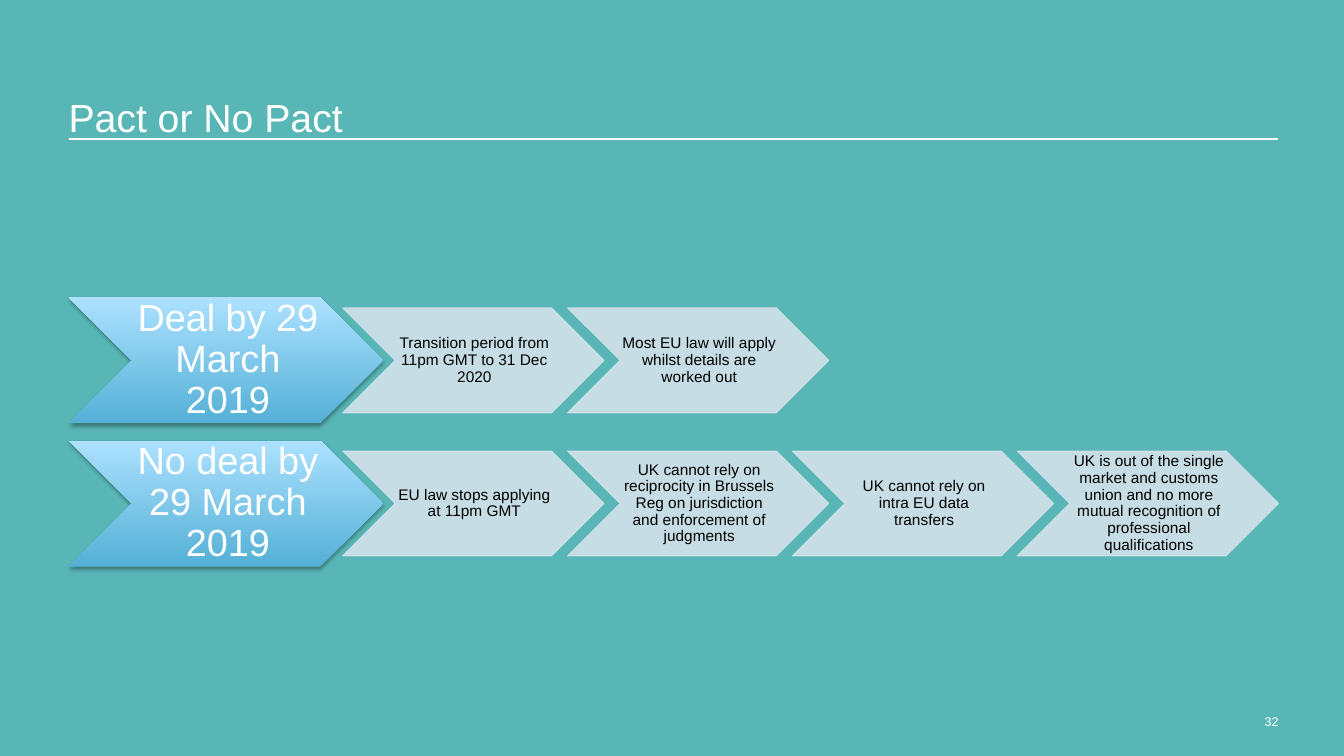
from lxml.etree import SubElement as Sub
from pptx import Presentation
from pptx.dml.color import RGBColor as RGB
from pptx.enum.shapes import MSO_CONNECTOR as Conn, MSO_SHAPE as Shape
from pptx.enum.text import MSO_ANCHOR as Anchor, PP_ALIGN as Align
from pptx.oxml.ns import qn
from pptx.util import Inches, Pt

TEAL = RGB(0x58, 0xB7, 0xB6)
WHITE = RGB(0xFF, 0xFF, 0xFF)
BLACK = RGB(0x00, 0x00, 0x00)
BLUE = RGB(0x55, 0xB0, 0xD6)
SKY = RGB(0xAC, 0xE1, 0xFF)
PALE = RGB(0xD3, 0xE2, 0xEB)

LEFT, RIGHT = 0.68, 12.68
TOP, ROW = 2.95, 1.42
STEP_X, STEP_GAP = 3.4, 2.23
HEAD_W, HEAD_H = 3.12, 1.25
STEP_W, STEP_H = 2.59, 1.04

ROWS = [
    ("Deal by 29 March 2019", [
        "Transition period from 11pm GMT to 31 Dec 2020",
        "Most EU law will apply whilst details are worked out",
    ]),
    ("No deal by 29 March 2019", [
        "EU law stops applying at 11pm GMT",
        "UK cannot rely on reciprocity in Brussels Reg on jurisdiction "
        "and enforcement of judgments",
        "UK cannot rely on intra EU data transfers",
        "UK is out of the single market and customs union and no more "
        "mutual recognition of professional qualifications",
    ]),
]


def put(item, **vals):
    for name, val in vals.items():
        setattr(item, name, val)


def write(shape, text, size, color, align, anchor, pad=(0, 0, 0), lead=1.0):
    """Fill a shape with one paragraph; pad is left, top, bottom."""
    left, top, base = map(Inches, pad)
    frame = shape.text_frame
    put(frame, word_wrap=True, vertical_anchor=anchor, margin_left=left,
        margin_top=top, margin_right=0, margin_bottom=base)
    para = frame.paragraphs[0]
    put(para, text=text, alignment=align, line_spacing=lead)
    font = para.runs[0].font
    put(font, name="Arial", size=Pt(size))
    font.color.rgb = color


def label(slide, box, *text):
    write(slide.shapes.add_textbox(*map(Inches, box)), *text)


def rule(slide, y):
    line = slide.shapes.add_connector(
        Conn.STRAIGHT, Inches(LEFT), Inches(y), Inches(RIGHT), Inches(y))
    line.line.color.rgb = WHITE
    line.line.width = Pt(1.25)
    Sub(line._element.spPr, qn("a:effectLst"))


def arrow(slide, *box):
    shape = slide.shapes.add_shape(Shape.CHEVRON, *map(Inches, box))
    shape.shadow.inherit = False
    return shape


def head(slide, y, text):
    shape = arrow(slide, LEFT, y, HEAD_W, HEAD_H)
    shape.line.fill.background()
    # Blue at the foot, sky at the top
    shape.fill.gradient()
    shape.fill.gradient_angle = 90
    for stop, color in zip(shape.fill.gradient_stops, (BLUE, SKY)):
        stop.color.rgb = color
    # Soft shadow below
    glow = Sub(shape._element.spPr.find(qn("a:effectLst")),
               qn("a:outerShdw"), blurRad=str(Pt(3.1)), dist=str(Pt(1.8)),
               dir="5400000", rotWithShape="0")
    tone = Sub(glow, qn("a:srgbClr"), val=str(BLACK))
    Sub(tone, qn("a:alpha"), val="35000")
    write(shape, text, 27, WHITE, Align.CENTER, Anchor.MIDDLE,
          (0.04, 0.02, 0.02), 0.9)


def step(slide, x, y, text):
    shape = arrow(slide, x, y, STEP_W, STEP_H)
    shape.fill.solid()
    shape.fill.fore_color.rgb = PALE
    shape.line.color.rgb = PALE
    shape.line.width = Pt(0.75)
    # Slightly clear fill and outline
    for tone in shape._element.spPr.iter(qn("a:srgbClr")):
        Sub(tone, qn("a:alpha"), val="90000")
    write(shape, text, 11, BLACK, Align.CENTER, Anchor.MIDDLE,
          (0.02, 0.01, 0.01), 0.9)


def main():
    deck = Presentation()
    put(deck, slide_width=Inches(13.33), slide_height=Inches(7.5))
    slide = deck.slides.add_slide(deck.slide_layouts[6])
    fill = slide.background.fill
    fill.solid()
    fill.fore_color.rgb = TEAL

    # Title and rule
    rule(slide, 1.38)
    label(slide, (LEFT, 0.91, 11.98, 0.48), "Pact or No Pact", 28, WHITE,
          Align.LEFT, Anchor.BOTTOM)

    # One row of chevrons for each outcome
    for i, (title, steps) in enumerate(ROWS):
        y = TOP + i * ROW
        head(slide, y, title)
        for j, text in enumerate(steps):
            step(slide, STEP_X + j * STEP_GAP,
                 y + (HEAD_H - STEP_H) / 2, text)

    # Page number
    label(slide, (11.39, 7.08, 1.29, 0.46), "32", 9, WHITE,
          Align.RIGHT, Anchor.TOP)
    deck.save("out.pptx")


if __name__ == "__main__":
    main()
